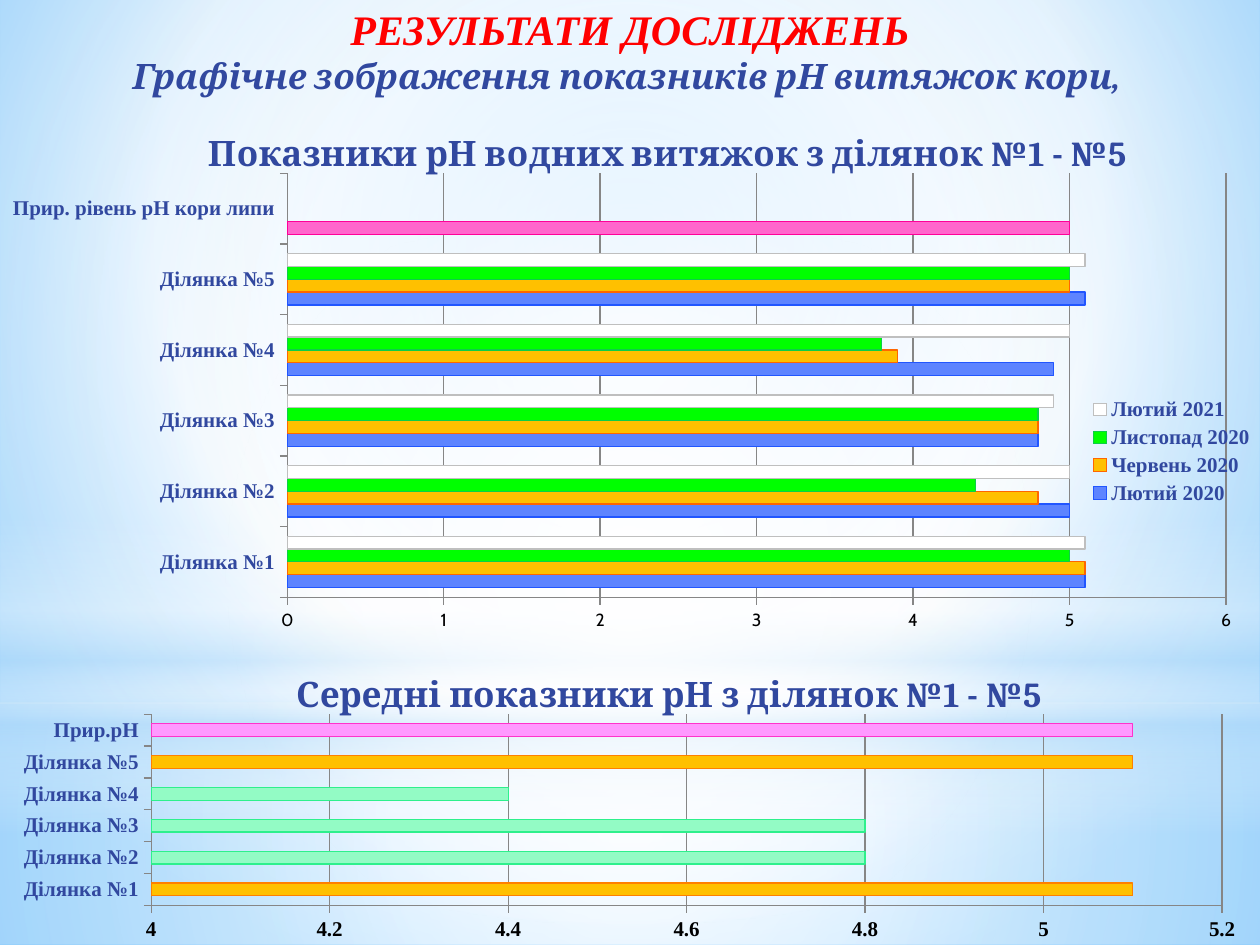
"""Build the slide with bar charts of bark-extract pH by plot."""
from lxml import etree
from pptx import Presentation
from pptx.chart.data import CategoryChartData
from pptx.dml.color import RGBColor
from pptx.enum.chart import XL_CHART_TYPE, XL_LEGEND_POSITION, XL_TICK_MARK
from pptx.enum.shapes import MSO_SHAPE
from pptx.enum.text import MSO_AUTO_SIZE, PP_ALIGN
from pptx.oxml import parse_xml
from pptx.oxml.ns import qn
from pptx.util import Inches, Pt

BARS = XL_CHART_TYPE.BAR_CLUSTERED
RIGHT = XL_LEGEND_POSITION.RIGHT
TICK_OUT, TICK_NONE = XL_TICK_MARK.OUTSIDE, XL_TICK_MARK.NONE
RECT, OVAL = MSO_SHAPE.RECTANGLE, MSO_SHAPE.OVAL
CENTER = PP_ALIGN.CENTER
GROW = MSO_AUTO_SIZE.SHAPE_TO_FIT_TEXT
NAVY, GREY, BLACK = "31489F", "868686", "000000"
SERIF, ROMAN, SANS = "Cambria", "Times New Roman", "Cabin"
DRAWING = "http://schemas.openxmlformats.org/drawingml/2006/main"
CENTRE_RECT = (50, 50, 50, 50)


def paint(properties, stops, focus):
    """Replace a solid fill by a gradient: circular around focus, or vertical."""
    gradient = etree.Element(qn("a:gradFill"), nsmap={"a": DRAWING}, rotWithShape="1")
    stop_list = etree.SubElement(gradient, qn("a:gsLst"))
    for position, color, opacity in stops:
        stop = etree.SubElement(stop_list, qn("a:gs"), pos=str(position * 1000))
        tint = etree.SubElement(stop, qn("a:srgbClr"), val=color)
        if opacity < 100:
            etree.SubElement(tint, qn("a:alpha"), val=str(opacity * 1000))
    if focus:
        circle = etree.SubElement(gradient, qn("a:path"), path="circle")
        sides = {side: str(share * 1000) for side, share in zip("ltrb", focus)}
        etree.SubElement(circle, qn("a:fillToRect"), **sides)
    else:
        etree.SubElement(gradient, qn("a:lin"), ang="5400000", scaled="0")
    properties.replace(properties.find(qn("a:solidFill")), gradient)


def arrange(element, index, **shares):
    """Give a chart part a manual layout in shares of the chart."""
    for old in element.findall(qn("c:layout")):
        element.remove(old)
    layout = parse_xml(
        '<c:layout xmlns:c="http://schemas.openxmlformats.org/drawingml/2006/chart">'
        "<c:manualLayout/></c:layout>")
    manual = layout[0]
    if element.tag == qn("c:plotArea"):
        etree.SubElement(manual, qn("c:layoutTarget"), val="inner")
    for axis in "xy":
        etree.SubElement(manual, qn(f"c:{axis}Mode"), val="edge")
    for name, share in shares.items():
        etree.SubElement(manual, qn(f"c:{name}"), val=str(share))
    element.insert(index, layout)


deck = Presentation()
deck.slide_width, deck.slide_height = Inches(10), Inches(7.5)
page = deck.slides.add_slide(deck.slide_layouts[6])

page.background.fill.solid()
paint(page.background._cSld.bg.bgPr,
      [(0, "9ED5FF", 100), (60, "FFFFFF", 100), (100, "5BB9FF", 100)], (20, 10, 20, 60))

glows = [
    (RECT, 5.58, 1.92, CENTRE_RECT,
     [(0, "FFFFFF", 91), (37, "FFFFFF", 76), (100, "B4DCFA", 79)]),
    (RECT, 0, 5.58, CENTRE_RECT,
     [(0, "FFFFFF", 89), (48, "FFFFFF", 62), (100, "B4DCFA", 79)]),
    (RECT, 4.12, 2.5, None,
     [(0, "FFFFFF", 0), (29, "FFFFFF", 30), (45, "B4DCFA", 40),
      (55, "FFFFFF", 26), (65, "B4DCFA", 60), (100, "FFFFFF", 0)]),
    (OVAL, 1.75, 5.58, CENTRE_RECT, [(0, "FFFFFF", 100), (56, "FFFFFF", 0)]),
]
for kind, top, height, focus, stops in glows:
    glow = page.shapes.add_shape(kind, 0, Inches(top), Inches(10), Inches(height))
    glow.shadow.inherit = False
    glow.line.fill.background()
    glow.fill.solid()
    paint(glow._element.spPr, stops, focus)

plots = [f"Ділянка №{number}" for number in range(1, 6)]
ORANGE, MINT = ("FFC000", "FF8000"), ("93FBC5", "2EF08C")
charts = [
    dict(title="Середні показники рН з ділянок №1 - №5", top=5.09, height=2.41,
         categories=plots + ["Прир.рН"], scale=(4, 5.2, 0.2),
         value_font=(12, True, ROMAN), title_at=dict(x=0.23, y=0.08),
         plot_at=dict(x=0.12, y=0.24, w=0.85, h=0.63), legend_at=None,
         series=[("Series 1", [5.1, 4.8, 4.8, 4.4, 5.1, 5.1], "FF99FF", "FF33CC")],
         points={0: ORANGE, 1: MINT, 2: MINT, 3: MINT, 4: ORANGE}),
    dict(title="Показники рН водних витяжок з ділянок №1 - №5", top=0.99, height=4.02,
         categories=plots + ["Прир. рівень рН кори липи"], scale=(0, 6, 1),
         value_font=(10, False, SANS), title_at=dict(x=0.16, y=0),
         plot_at=dict(x=0.228, y=0.096, w=0.745, h=0.837),
         legend_at=dict(x=0.86, y=0.53, w=0.14, h=0.23),
         series=[("Лютий 2020", [5.1, 5, 4.8, 4.9, 5.1, 5], "5D84FF", "2156FF"),
                 ("Червень 2020", [5.1, 4.8, 4.8, 3.9, 5, None], "FFC000", "FF6600"),
                 ("Листопад 2020", [5, 4.4, 4.8, 3.8, 5, None], "00FF00", "0CCE48"),
                 ("Лютий 2021", [5.1, 5, 4.9, 5, 5.1, None], "FFFFFF", "BFBFBF")],
         points={5: ("FF66CC", "FF0099")}),
]
for plan in charts:
    data = CategoryChartData()
    data.categories = plan["categories"]
    for name, values, _, _ in plan["series"]:
        data.add_series(name, values)
    chart = page.shapes.add_chart(BARS, 0, Inches(plan["top"]), Inches(10),
                                  Inches(plan["height"]), data).chart
    chart.font.size, chart.font.name = Pt(10), SANS
    chart.font.color.rgb = RGBColor.from_string(BLACK)

    chart.has_title = True
    para = chart.chart_title.text_frame.paragraphs[0]
    para.text = plan["title"]
    styled = [(para.font, 20, True, SERIF, NAVY)]
    arrange(chart.chart_title._element, 1, **plan["title_at"])
    arrange(chart._chartSpace.chart.plotArea, 0, **plan["plot_at"])

    categories, scale = chart.category_axis, chart.value_axis
    scale.minimum_scale, scale.maximum_scale, scale.major_unit = plan["scale"]
    scale.has_major_gridlines = True
    scale.tick_labels.number_format = "General"
    scale.tick_labels.number_format_is_linked = False
    styled.append((categories.tick_labels.font, 12, True, ROMAN, NAVY))
    styled.append((scale.tick_labels.font, *plan["value_font"], BLACK))
    for axis in (categories, scale):
        axis.major_tick_mark, axis.minor_tick_mark = TICK_OUT, TICK_NONE
    for line in (categories.format.line, scale.format.line, scale.major_gridlines.format.line):
        line.color.rgb = RGBColor.from_string(GREY)
        line.width = Pt(0.75)

    chart.has_legend = plan["legend_at"] is not None
    if chart.has_legend:
        chart.legend.position = RIGHT
        chart.legend.include_in_layout = False
        arrange(chart.legend._element, 1, **plan["legend_at"])
        styled.append((chart.legend.font, 12, True, ROMAN, NAVY))
    for font, size, bold, face, color in styled:
        font.size, font.bold, font.name = Pt(size), bold, face
        font.color.rgb = RGBColor.from_string(color)

    bars = chart.plots[0]
    bars.gap_width, bars.overlap, bars.vary_by_categories = 150, 0, False
    painted = [(series, fill, edge)
               for series, (_, _, fill, edge) in zip(bars.series, plan["series"])]
    painted += [(bars.series[0].points[index], *colors)
                for index, colors in plan["points"].items()]
    for item, fill, edge in painted:
        item.format.fill.solid()
        item.format.fill.fore_color.rgb = RGBColor.from_string(fill)
        item.format.line.color.rgb = RGBColor.from_string(edge)
        item.format.line.width = Pt(0.75)
    for series in bars.series:
        series.invert_if_negative = False

    if plan is charts[0]:
        box = page.shapes.add_textbox(0, Inches(-0.02), Inches(10), Inches(0.84))
        box.text_frame.word_wrap = True
        box.text_frame.auto_size = GROW
        headings = [("РЕЗУЛЬТАТИ ДОСЛІДЖЕНЬ", 24, ROMAN, "FF0000"),
                    ("Графічне зображення показників рН витяжок кори, ", 20, SERIF, NAVY)]
        box.text_frame.text = "\n".join(heading[0] for heading in headings)
        for para, (_, size, face, color) in zip(box.text_frame.paragraphs, headings):
            para.alignment = CENTER
            para.font.size, para.font.name = Pt(size), face
            para.font.bold = para.font.italic = True
            para.font.color.rgb = RGBColor.from_string(color)

deck.save("out.pptx")
